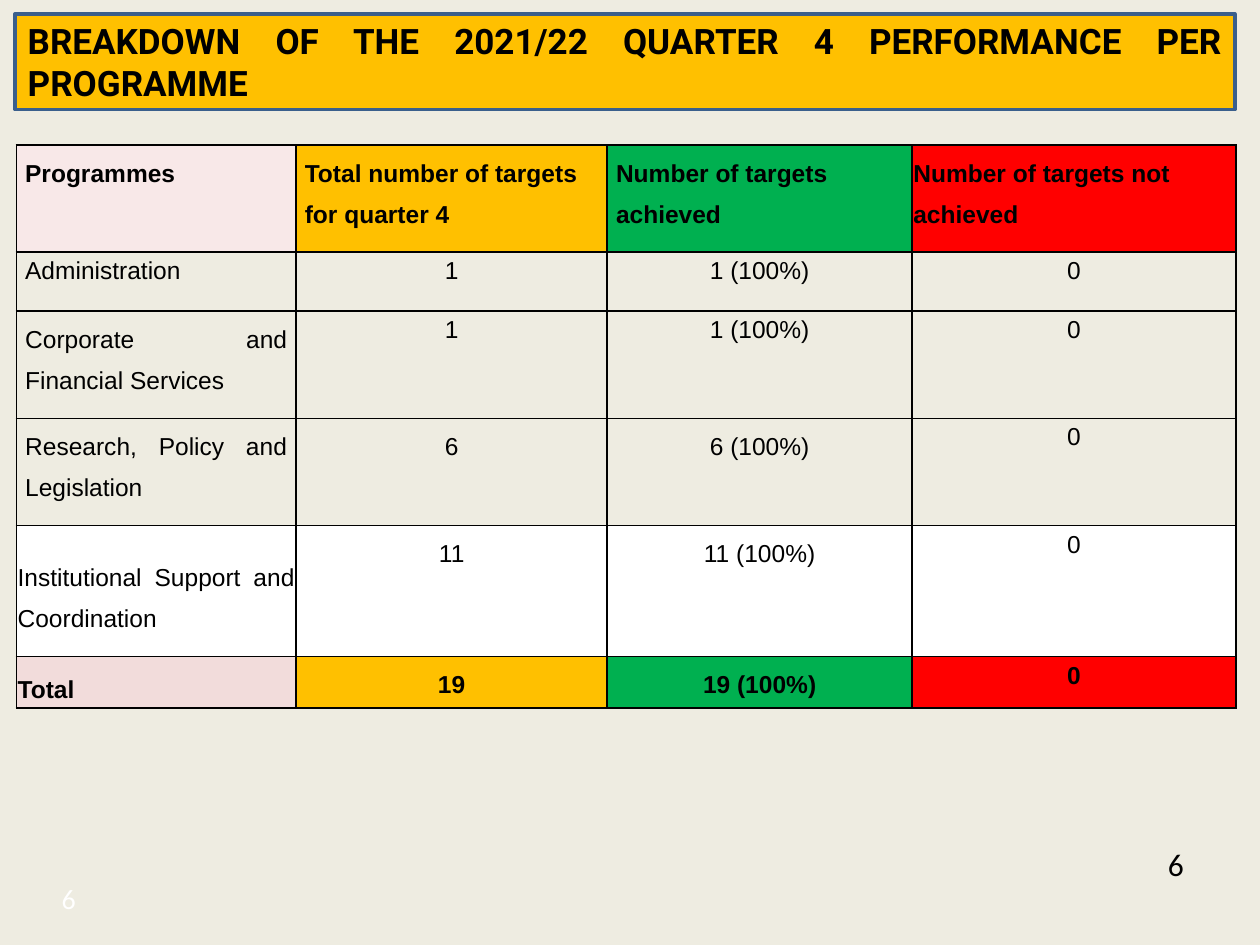
from dataclasses import dataclass

from lxml import etree
from pptx import Presentation
from pptx.dml.color import RGBColor
from pptx.enum.text import MSO_ANCHOR, MSO_AUTO_SIZE, PP_ALIGN
from pptx.oxml.ns import qn
from pptx.util import Inches, Pt

LEFT, MID, JUST = PP_ALIGN.LEFT, PP_ALIGN.CENTER, PP_ALIGN.JUSTIFY
TOP, CENTRE = MSO_ANCHOR.TOP, MSO_ANCHOR.MIDDLE
FIXED = MSO_AUTO_SIZE.NONE


@dataclass(frozen=True)
class Theme:
    back: str = "EEECE1"
    gold: str = "FFC000"
    green: str = "00B050"
    red: str = "FF0000"
    blush: str = "F8E8E8"
    rose: str = "F2DCDB"
    edge: str = "3A5F8C"
    black: str = "000000"
    white: str = "FFFFFF"
    head: str = "Roboto"
    body: str = "Arial"
    num: str = "Calibri"
    title: int = 20
    cell: int = 14
    page: int = 18
    foot: int = 16


T = Theme()
TIGHT, LOOSE = 1.15, 1.5
WIDTHS = (2.22, 2.47, 2.42, 2.57)
PLAIN = (None,) * 4


@dataclass(frozen=True)
class Row:
    texts: tuple[str, ...]
    height: float
    fills: tuple = PLAIN
    name_gap: float = LOOSE   # line spacing of the programme name
    count_gap: float = LOOSE  # line spacing of the two target counts
    bold: bool = False
    flush: bool = False       # name centred vertically, without side margins


ROWS = (
    Row(("Programmes", "Total number of targets for quarter 4",
         "Number of targets achieved", "Number of targets not achieved"),
        0.85, (T.blush, T.gold, T.green, T.red), bold=True),
    Row(("Administration", "1", "1 (100%)", "0"), 0.47,
        name_gap=TIGHT, count_gap=TIGHT),
    Row(("Corporate and Financial Services", "1", "1 (100%)", "0"), 0.85,
        count_gap=TIGHT),
    Row(("Research, Policy and Legislation", "6", "6 (100%)", "0"), 0.85),
    Row(("Institutional Support and Coordination", "11", "11 (100%)", "0"),
        1.04, (T.white,) * 4, flush=True),
    Row(("Total", "19", "19 (100%)", "0"), 0.41,
        (T.rose, T.gold, T.green, T.red), bold=True, flush=True),
)


def tint(code: str) -> RGBColor:
    return RGBColor.from_string(code)


def write(frame, text: str, *, size: int, font: str, color: str = T.black,
          bold: bool = False, align=LEFT, gap: float = 1.0) -> None:
    par = frame.paragraphs[0]
    par.alignment = align
    par.line_spacing = gap
    run = par.add_run()
    run.text = text
    run.font.size = Pt(size)
    run.font.name = font
    run.font.bold = bold
    run.font.color.rgb = tint(color)


def border(cell) -> None:
    props = cell._tc.get_or_add_tcPr()
    for side in ("a:lnL", "a:lnR", "a:lnT", "a:lnB"):
        line = etree.SubElement(props, qn(side), w=str(Pt(1)))
        fill = etree.SubElement(line, qn("a:solidFill"))
        etree.SubElement(fill, qn("a:srgbClr"), val=T.black)


def draw_cell(cell, row: Row, col: int, header: bool) -> None:
    last = col == len(WIDTHS) - 1
    flush = row.flush and col == 0
    side = 0.01 if last or flush else 0.07
    cell.margin_left = cell.margin_right = Inches(side)
    cell.margin_top, cell.margin_bottom = Inches(0.01), 0
    cell.vertical_anchor = CENTRE if flush else TOP
    border(cell)
    if row.fills[col]:
        cell.fill.solid()
        cell.fill.fore_color.rgb = tint(row.fills[col])
    else:
        cell.fill.background()
    if col == 0:
        align, gap = JUST, row.name_gap
    else:
        align = LEFT if header else MID
        gap = TIGHT if last and not header else row.count_gap
    write(cell.text_frame, row.texts[col], size=T.cell, font=T.body,
          bold=row.bold, align=align, gap=gap)


def draw_table(slide) -> None:
    high = sum(row.height for row in ROWS)
    table = slide.shapes.add_table(
        len(ROWS), len(WIDTHS), Inches(0.13), Inches(1.15),
        Inches(sum(WIDTHS)), Inches(high)).table
    table.first_row = table.horz_banding = False
    for col, width in enumerate(WIDTHS):
        table.columns[col].width = Inches(width)
    for i, row in enumerate(ROWS):
        table.rows[i].height = Inches(row.height)
        for col in range(len(WIDTHS)):
            draw_cell(table.cell(i, col), row, col, i == 0)


def draw_title(slide) -> None:
    title = slide.shapes.title
    title.left, title.top = Inches(0.12), Inches(0.11)
    title.width, title.height = Inches(9.68), Inches(0.76)
    title.fill.solid()
    title.fill.fore_color.rgb = tint(T.gold)
    title.line.color.rgb = tint(T.edge)
    title.line.width = Pt(2)
    frame = title.text_frame
    frame.word_wrap = True
    frame.auto_size = FIXED
    frame.vertical_anchor = CENTRE
    write(frame, "BREAKDOWN OF THE 2021/22 QUARTER 4 PERFORMANCE PER PROGRAMME",
          size=T.title, font=T.head, bold=True, align=JUST)


def draw_page(slide, left: float, top: float, size: int, color: str) -> None:
    box = slide.shapes.add_textbox(
        Inches(left), Inches(top), Inches(0.33), Inches(0.4))
    box.text_frame.word_wrap = False
    write(box.text_frame, "6", size=size, font=T.num, color=color)


def main() -> None:
    deck = Presentation()
    deck.slide_width, deck.slide_height = Inches(10), Inches(7.5)
    slide = deck.slides.add_slide(deck.slide_layouts[5])
    slide.background.fill.solid()
    slide.background.fill.fore_color.rgb = tint(T.back)

    # Heading, page numbers, results table
    draw_title(slide)
    draw_page(slide, 0.39, 6.95, T.foot, T.white)
    draw_page(slide, 9.17, 6.66, T.page, T.black)
    draw_table(slide)
    deck.save("out.pptx")


if __name__ == "__main__":
    main()
